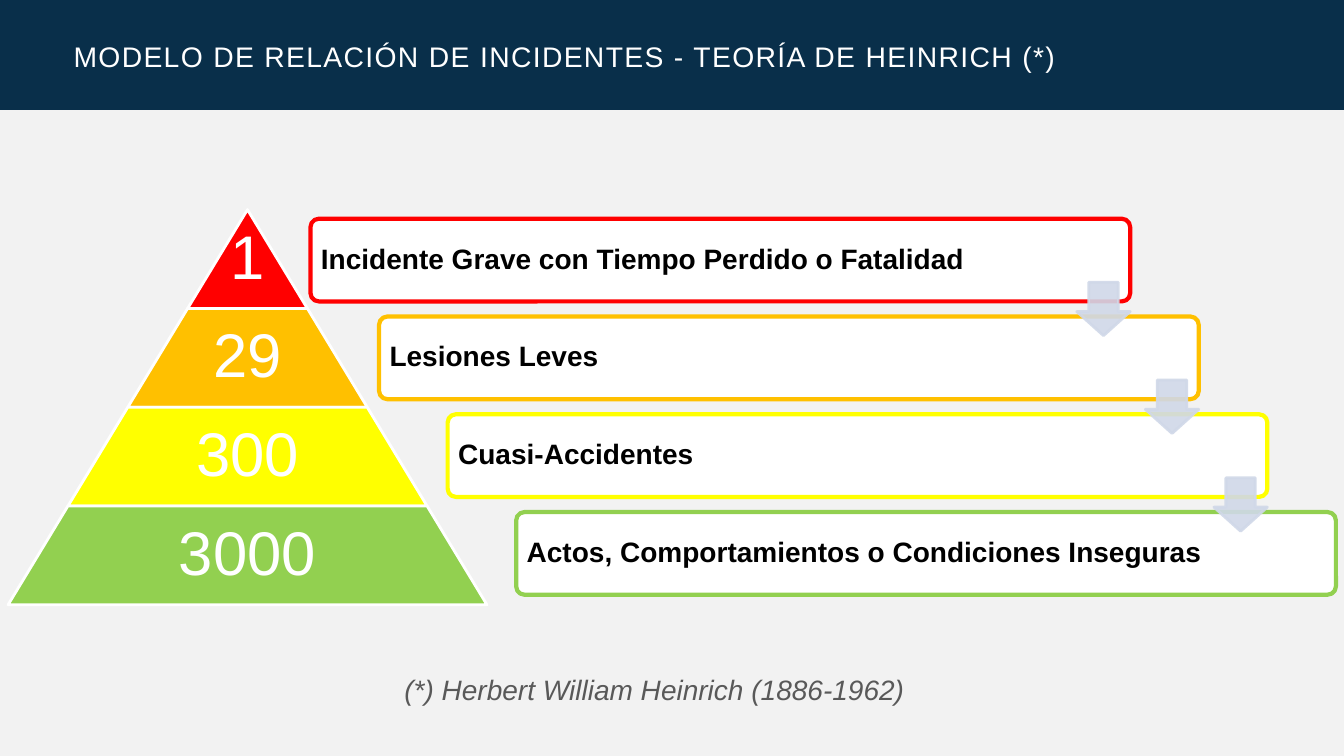
from dataclasses import dataclass

from lxml import etree
from pptx import Presentation
from pptx import util as u
from pptx.dml.color import RGBColor
from pptx.enum import shapes, text
from pptx.oxml import ns


@dataclass(frozen=True)
class Theme:
    font: str = "Arial"
    background: str = "F2F2F2"
    banner: str = "092F4A"
    white: str = "FFFFFF"
    black: str = "000000"
    note: str = "595959"
    arrow: str = "D0D8E8"
    title_size: float = 20.2
    body_size: float = 20
    number_size: float = 44


THEME = Theme()
SHAPE = shapes.MSO_SHAPE
ALIGN = text.PP_ALIGN
ANCHOR = text.MSO_ANCHOR

LEVELS = [
    ("1", "Incidente Grave con Tiempo Perdido o Fatalidad", "FF0000"),
    ("29", "Lesiones Leves", "FFC000"),
    ("300", "Cuasi-Accidentes", "FFFF00"),
    ("3000", "Actos, Comportamientos o Condiciones Inseguras", "92D050"),
]


def rgb(value):
    return RGBColor.from_string(value)


def inches(*lengths):
    return [u.Inches(length) for length in lengths]


def write(sp, content, size, color, bold=False, italic=False, align=ALIGN.LEFT,
          anchor=ANCHOR.MIDDLE, inset=(0.08, 0.08), line_spacing=1.0, tracking=0):
    tf = sp.text_frame
    tf.word_wrap = True
    tf.vertical_anchor = anchor
    tf.margin_left = tf.margin_right = u.Inches(inset[0])
    tf.margin_top = tf.margin_bottom = u.Inches(inset[1])
    p = tf.paragraphs[0]
    p.alignment = align
    p.line_spacing = line_spacing
    r = p.add_run()
    r.text = content
    r.font.name = THEME.font
    r.font.size = u.Pt(size)
    r.font.color.rgb = rgb(color)
    r.font.bold = bold
    r.font.italic = italic
    if tracking:
        r._r.get_or_add_rPr().set("spc", str(tracking * 100))


def add_box(s, kind, box, fill, line=None, width=0, adjustments=()):
    sp = s.shapes.add_shape(kind, *inches(*box))
    sp.shadow.inherit = False
    sp.fill.solid()
    sp.fill.fore_color.rgb = rgb(fill)
    if line:
        sp.line.color.rgb = rgb(line)
        sp.line.width = u.Pt(width)
    else:
        sp.line.fill.background()
    for i, value in enumerate(adjustments):
        sp.adjustments[i] = value
    return sp


def set_opacity(sp, percent):
    for color in sp._element.spPr.iter(ns.qn("a:srgbClr")):
        etree.SubElement(color, ns.qn("a:alpha")).set("val", str(percent * 1000))


def add_banner(s, left, top, width, height):
    add_box(s, SHAPE.RECTANGLE, (left, top, width, height), THEME.banner)
    title = s.shapes.add_textbox(*inches(left + 0.6, top + 0.01, width - 1.19, height + 0.01))
    write(title, "MODELO DE RELACIÓN DE INCIDENTES - TEORÍA DE HEINRICH (*)",
          THEME.title_size, THEME.white, inset=(0.13, 0.07), tracking=1)


def add_pyramid(s, left, top, width, height):
    count = len(LEVELS)
    step = height / count
    slant = width / count / 2
    for i, (number, _, color) in enumerate(LEVELS):
        tier_width = width * (i + 1) / count
        box = (left + (width - tier_width) / 2, top + i * step, tier_width, step)
        add_box(s, SHAPE.TRAPEZOID, box, color, THEME.white, 2,
                [slant / min(step, tier_width)])
        label = s.shapes.add_textbox(*inches(*box))
        write(label, number, THEME.number_size, THEME.white, align=ALIGN.CENTER,
              inset=(0.06, 0.06), line_spacing=0.9)


def add_staircase(s, left, top, width, height):
    bar_width, bar_height, arrow = 8.13, 0.82, 0.53
    gaps = len(LEVELS) - 1
    dx = (width - bar_width) / gaps
    dy = (height - bar_height) / gaps
    for i, (_, label, color) in enumerate(LEVELS):
        bar = add_box(s, SHAPE.ROUNDED_RECTANGLE,
                      (left + i * dx, top + i * dy, bar_width, bar_height),
                      THEME.white, color, 3, [0.1])
        write(bar, label, THEME.body_size, THEME.black, bold=True, line_spacing=0.9)
    for i in range(gaps):
        sp = add_box(s, SHAPE.DOWN_ARROW,
                     (left + i * dx + bar_width - arrow, top + i * dy + 0.63, arrow, arrow),
                     THEME.arrow, THEME.arrow, 2, [0.55, 0.45])
        set_opacity(sp, 90)


def add_footnote(s, *box):
    note = s.shapes.add_textbox(*inches(*box))
    write(note, "(*) Herbert William Heinrich (1886-1962)", THEME.body_size, THEME.note,
          italic=True, anchor=ANCHOR.TOP, inset=(0.13, 0.07))


def main():
    prs = Presentation()
    prs.slide_width, prs.slide_height = inches(13.33, 7.5)
    s = prs.slides.add_slide(prs.slide_layouts[6])
    s.background.fill.solid()
    s.background.fill.fore_color.rgb = rgb(THEME.background)
    add_banner(s, 0, 0, 13.33, 1.09)
    add_footnote(s, 3.88, 6.6, 5.58, 0.58)
    add_pyramid(s, 0.08, 2.08, 4.75, 3.92)
    add_staircase(s, 3.08, 2.17, 10.17, 3.73)
    prs.save("out.pptx")


if __name__ == "__main__":
    main()
